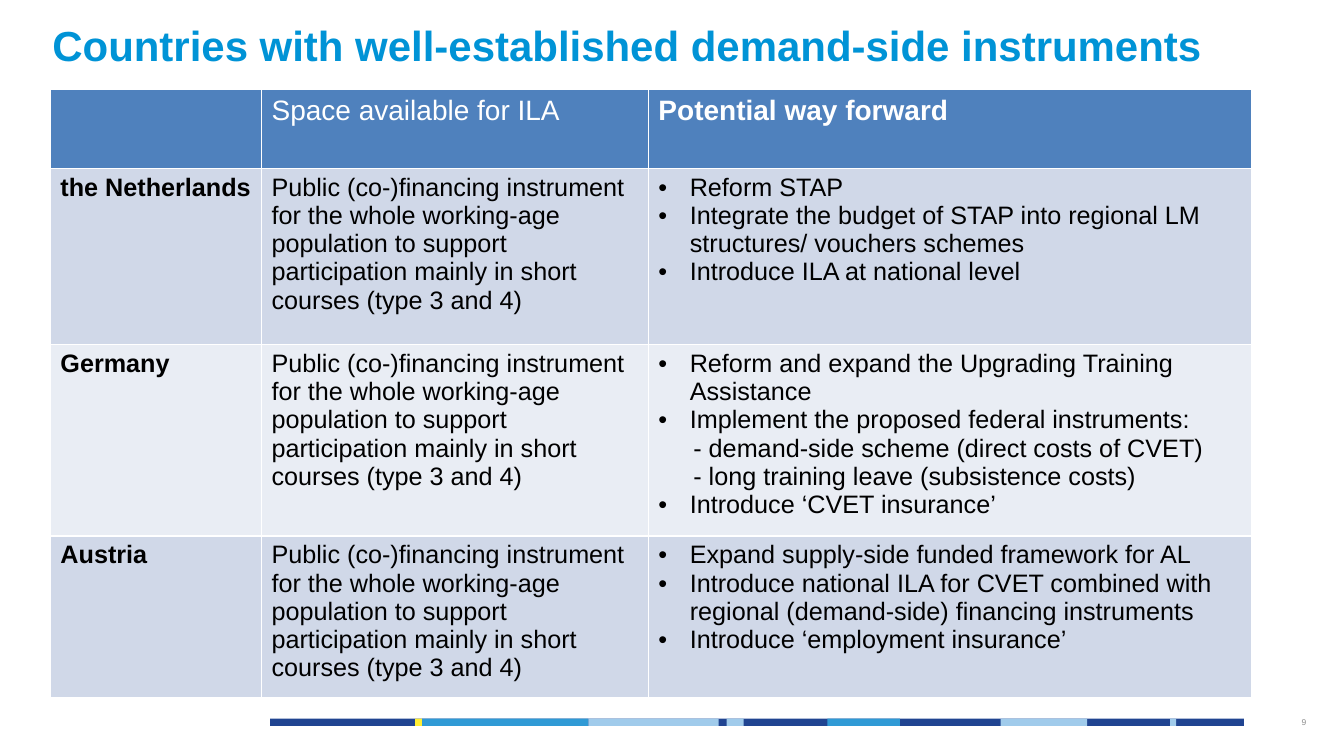
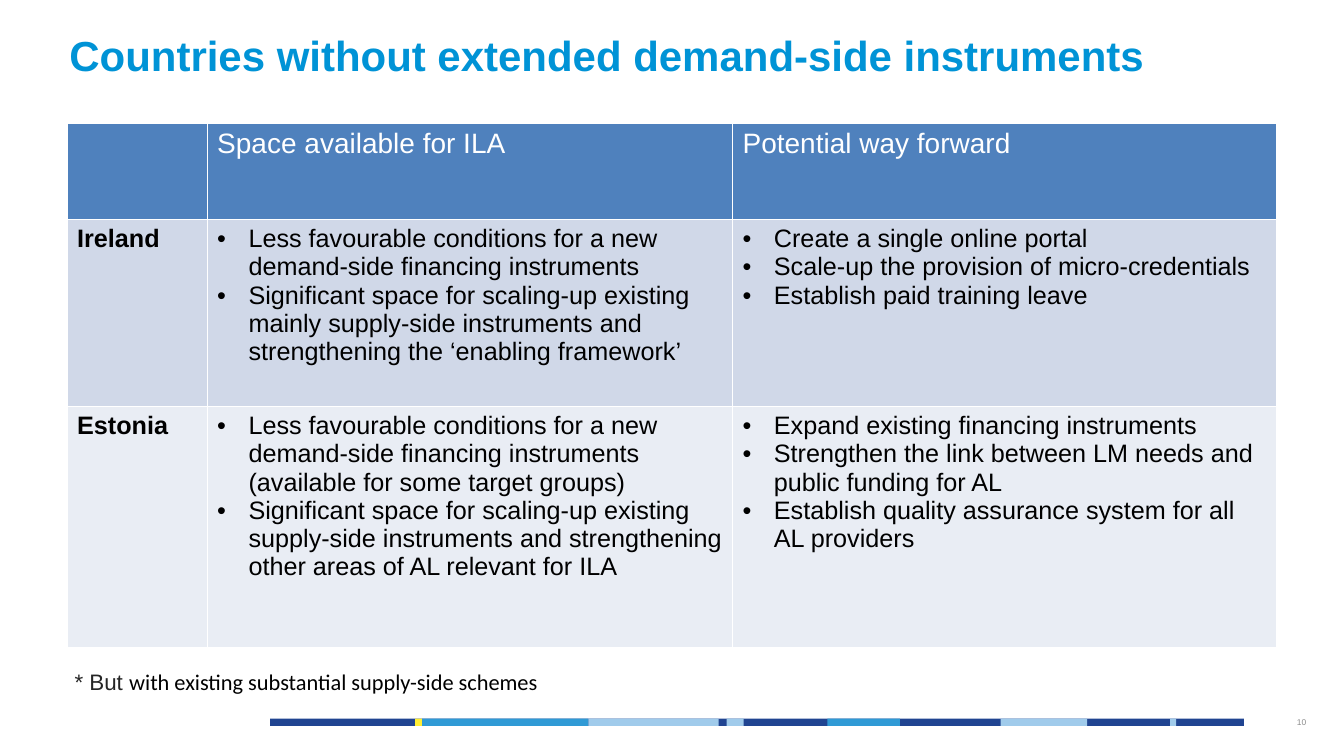
from dataclasses import dataclass
from typing import NamedTuple

from lxml import etree
from pptx import Presentation
from pptx.dml.color import RGBColor
from pptx.enum.shapes import MSO_SHAPE
from pptx.enum.text import MSO_ANCHOR, PP_ALIGN
from pptx.oxml.ns import qn
from pptx.util import Cm, Pt

RECTANGLE = MSO_SHAPE.RECTANGLE
TOP, MIDDLE = MSO_ANCHOR.TOP, MSO_ANCHOR.MIDDLE
LEFT, RIGHT = PP_ALIGN.LEFT, PP_ALIGN.RIGHT

# Colours
WHITE = RGBColor(0xFF, 0xFF, 0xFF)
BLACK = RGBColor(0x00, 0x00, 0x00)
DARK_GREY = RGBColor(0x26, 0x26, 0x26)
NUMBER_GREY = RGBColor(0x8C, 0x8C, 0x8C)
TITLE_BLUE = RGBColor(0x00, 0x93, 0xD6)
HEADER_BLUE = RGBColor(0x4F, 0x81, 0xBD)
ROW_FILLS = (RGBColor(0xD0, 0xD8, 0xE8), RGBColor(0xE9, 0xED, 0xF4))
NAVY = RGBColor(0x20, 0x44, 0x91)
YELLOW = RGBColor(0xFF, 0xEE, 0x35)
SKY = RGBColor(0x30, 0x9A, 0xD5)
PALE = RGBColor(0xA0, 0xCB, 0xEB)

BODY_FONT, NOTE_FONT = "Arial", "Calibri"
BULLET_INDENT, DASH_INDENT = Cm(0.79), Cm(0.88)


class Segment(NamedTuple):
    left: float
    width: float
    color: RGBColor


class Line(NamedTuple):
    text: str
    marker: str = ""


class Style(NamedTuple):
    size: float
    color: RGBColor
    bold: bool = False
    font: str = BODY_FONT


class Box(NamedTuple):
    left: float
    top: float
    width: float
    height: float


@dataclass
class CountrySlide:
    number: int
    title: str
    title_box: Box
    table_left: float
    table_top: float
    columns: list[float]
    rows: list[float]
    forward_bold: bool
    countries: list[tuple[str, list[Line], list[Line]]]


TITLE_STYLE = Style(30, TITLE_BLUE, True)
NUMBER_STYLE = Style(6, NUMBER_GREY)
COUNTRY_STYLE = Style(18, BLACK, True)
BODY_STYLE = Style(18, BLACK)

# Footer band: the navy base first, the accents on top
FOOTER_BAND = [
    Segment(6.81, 24.54, NAVY),
    Segment(10.46, 0.18, YELLOW),
    Segment(10.64, 4.19, SKY),
    Segment(14.83, 3.28, PALE),
    Segment(18.31, 0.43, PALE),
    Segment(20.85, 1.83, SKY),
    Segment(25.22, 2.18, PALE),
    Segment(29.49, 0.15, PALE),
]


def bullets(*texts: str) -> list[Line]:
    return [Line(text, "•") for text in texts]


def dashes(*texts: str) -> list[Line]:
    return [Line(text, "-") for text in texts]


PUBLIC_FINANCING = [Line(
    "Public (co-)financing instrument for the whole working-age population "
    "to support participation mainly in short courses (type 3 and 4)")]

SLIDES = [
    CountrySlide(
        9, "Countries with well-established demand-side instruments",
        Box(1.07, 0.36, 32, 1.75), 1.27, 2.26,
        [5.32, 9.75, 15.19], [1.98, 4.44, 4.5, 3.8], True,
        [
            ("the Netherlands", PUBLIC_FINANCING, bullets(
                "Reform STAP",
                "Integrate the budget of STAP into regional LM structures/ vouchers schemes",
                "Introduce ILA at national level")),
            ("Germany", PUBLIC_FINANCING, bullets(
                "Reform and expand the Upgrading Training Assistance",
                "Implement the proposed federal instruments:",
            ) + dashes(
                "- demand-side scheme (direct costs of CVET)",
                "- long training leave (subsistence costs)",
            ) + bullets("Introduce ‘CVET insurance’")),
            ("Austria", PUBLIC_FINANCING, bullets(
                "Expand supply-side funded framework for AL",
                "Introduce national ILA for CVET combined with regional "
                "(demand-side) financing instruments",
                "Introduce ‘employment insurance’")),
        ]),
    CountrySlide(
        10, "Countries without extended demand-side instruments",
        Box(1.5, 0.63, 29.57, 1.75), 1.69, 3.1,
        [3.53, 13.24, 13.72], [2.44, 4.71, 6.07], False,
        [
            ("Ireland", bullets(
                "Less favourable conditions for a new demand-side financing instruments",
                "Significant space for scaling-up existing mainly supply-side "
                "instruments and strengthening the ‘enabling framework’",
            ), bullets(
                "Create a single online portal",
                "Scale-up the provision of micro-credentials",
                "Establish paid training leave")),
            ("Estonia", bullets(
                "Less favourable conditions for a new demand-side financing "
                "instruments (available for some target groups)",
                "Significant space for scaling-up existing supply-side instruments "
                "and strengthening other areas of AL relevant for ILA",
            ), bullets(
                "Expand existing financing instruments",
                "Strengthen the link between LM needs and public funding for AL",
                "Establish quality assurance system for all\nAL providers")),
        ]),
]


def add_run(paragraph, text: str, style: Style) -> None:
    run = paragraph.add_run()
    run.text = text
    run.font.name = style.font
    run.font.size = Pt(style.size)
    run.font.bold = style.bold
    run.font.color.rgb = style.color


def add_text_box(slide, box: Box, anchor=TOP, align=LEFT):
    """Add a wrapping text box and return its first paragraph."""
    frame = slide.shapes.add_textbox(*(Cm(length) for length in box)).text_frame
    frame.word_wrap = True
    frame.vertical_anchor = anchor
    frame.paragraphs[0].alignment = align
    return frame.paragraphs[0]


def set_marker(paragraph, marker: str) -> None:
    properties = paragraph._p.get_or_add_pPr()
    if marker == "•":
        properties.set("marL", str(BULLET_INDENT))
        properties.set("indent", str(-BULLET_INDENT))
        etree.SubElement(properties, qn("a:buFont")).set("typeface", BODY_FONT)
        etree.SubElement(properties, qn("a:buChar")).set("char", marker)
    elif marker:
        properties.set("marL", str(DASH_INDENT))
        properties.set("indent", "0")


def fill_cell(cell, lines: list[Line], style: Style, fill: RGBColor) -> None:
    cell.fill.solid()
    cell.fill.fore_color.rgb = fill
    for index, line in enumerate(lines):
        frame = cell.text_frame
        paragraph = frame.add_paragraph() if index else frame.paragraphs[0]
        set_marker(paragraph, line.marker)
        for part_index, part in enumerate(line.text.split("\n")):
            if part_index:
                paragraph.add_line_break()
            add_run(paragraph, part, style)


def add_footer(slide, number: int) -> None:
    for segment in FOOTER_BAND:
        bar = slide.shapes.add_shape(
            RECTANGLE, Cm(segment.left), Cm(18.11), Cm(segment.width), Cm(0.18))
        bar.shadow.inherit = False
        bar.fill.solid()
        bar.fill.fore_color.rgb = segment.color
        bar.line.fill.background()
    paragraph = add_text_box(slide, Box(31.06, 17.68, 2.11, 1.02), MIDDLE, RIGHT)
    add_run(paragraph, str(number), NUMBER_STYLE)


def add_country_table(slide, content: CountrySlide) -> None:
    table = slide.shapes.add_table(
        len(content.rows), len(content.columns),
        Cm(content.table_left), Cm(content.table_top),
        Cm(sum(content.columns)), Cm(sum(content.rows))).table
    for column, width in zip(table.columns, content.columns):
        column.width = Cm(width)
    for row, height in zip(table.rows, content.rows):
        row.height = Cm(height)

    # Header row
    headings = [([], False),
                ([Line("Space available for ILA")], False),
                ([Line("Potential way forward")], content.forward_bold)]
    for index, (lines, bold) in enumerate(headings):
        fill_cell(table.cell(0, index), lines, Style(20, WHITE, bold), HEADER_BLUE)

    # One row per country
    for index, (country, space, forward) in enumerate(content.countries):
        fill = ROW_FILLS[index % 2]
        fill_cell(table.cell(index + 1, 0), [Line(country)], COUNTRY_STYLE, fill)
        fill_cell(table.cell(index + 1, 1), space, BODY_STYLE, fill)
        fill_cell(table.cell(index + 1, 2), forward, BODY_STYLE, fill)


def add_country_slide(presentation, content: CountrySlide):
    slide = presentation.slides.add_slide(presentation.slide_layouts[6])
    add_footer(slide, content.number)
    title = add_text_box(slide, content.title_box)
    title.line_spacing = Pt(36)
    add_run(title, content.title, TITLE_STYLE)
    add_country_table(slide, content)
    return slide


def main() -> None:
    presentation = Presentation()
    presentation.slide_width = Cm(33.87)
    presentation.slide_height = Cm(19.05)
    _, without_instruments = [
        add_country_slide(presentation, content) for content in SLIDES]

    # Footnote under the second table
    footnote = add_text_box(without_instruments, Box(1.63, 16.71, 30.5, 1.02))
    add_run(footnote, "* But ", Style(16, DARK_GREY))
    add_run(footnote, "with existing substantial supply-side schemes",
            Style(16, BLACK, font=NOTE_FONT))

    presentation.save("out.pptx")


if __name__ == "__main__":
    main()
